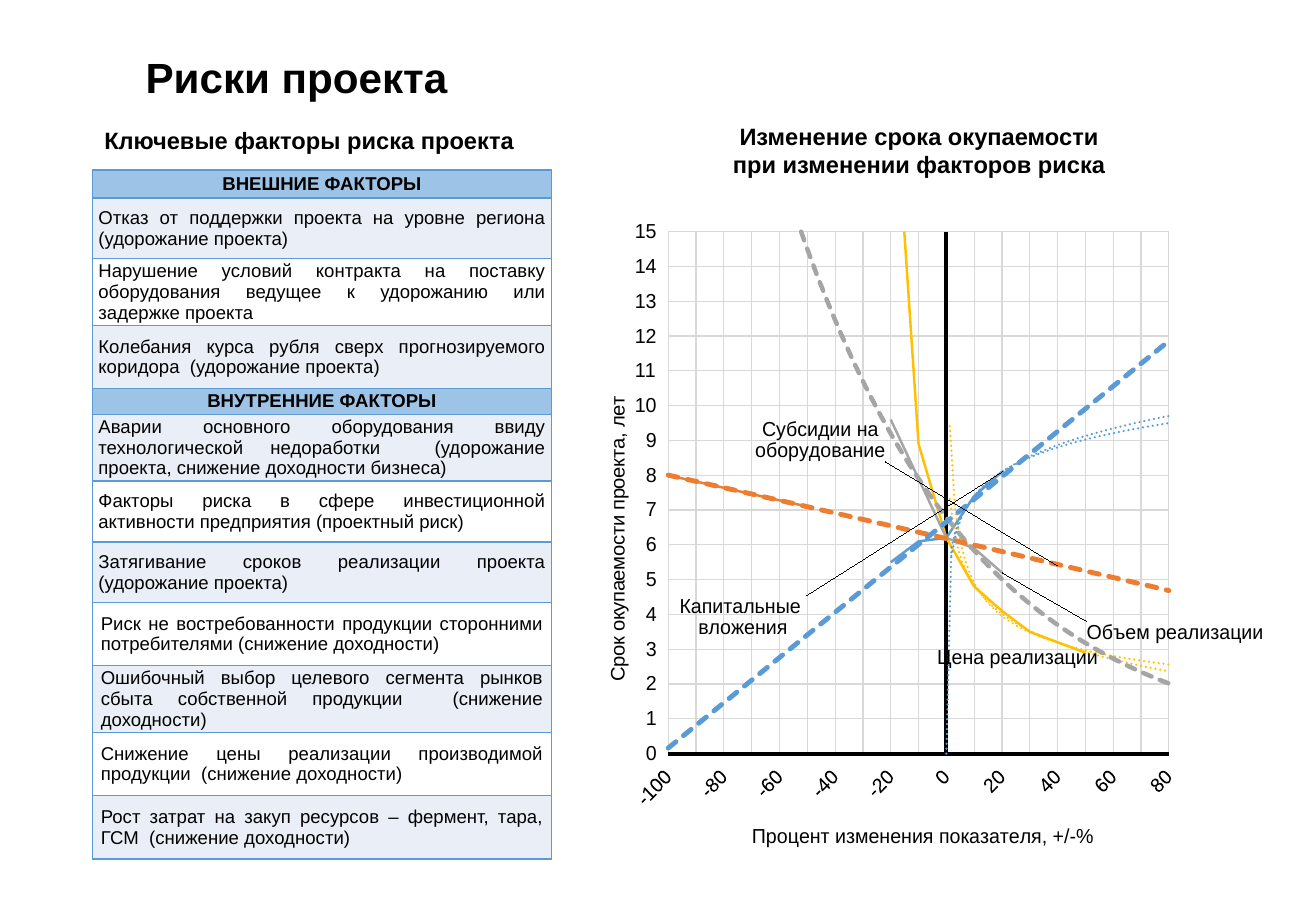
from lxml import etree
from pptx import Presentation
from pptx.chart.data import XyChartData
from pptx.dml.color import RGBColor
from pptx.enum.chart import XL_CHART_TYPE, XL_TICK_LABEL_POSITION, XL_TICK_MARK
from pptx.enum.text import MSO_ANCHOR, PP_ALIGN
from pptx.oxml import parse_xml
from pptx.oxml.ns import qn
from pptx.util import Inches, Pt

SCATTER = XL_CHART_TYPE.XY_SCATTER_LINES_NO_MARKERS
LABELS_LOW, NO_TICK = XL_TICK_LABEL_POSITION.LOW, XL_TICK_MARK.NONE
MIDDLE = MSO_ANCHOR.MIDDLE
LEFT, CENTER, JUSTIFY = PP_ALIGN.LEFT, PP_ALIGN.CENTER, PP_ALIGN.JUSTIFY
FONT = "Arial"
NS = ('xmlns:c="http://schemas.openxmlformats.org/drawingml/2006/chart" '
      'xmlns:a="http://schemas.openxmlformats.org/drawingml/2006/main"')
COLORS = {"text": "000000", "border": "5B9BD5", "section": "9DC3E6", "band": "EAEFF7",
          "plain": "FFFFFF", "grid": "D9D9D9", "capital": "5B9BD5", "subsidy": "ED7D31",
          "volume": "A5A5A5", "price": "FFC000"}

FACTORS = [
    ("ВНЕШНИЕ ФАКТОРЫ", 0.23, "section"),
    ("Отказ от поддержки проекта на уровне региона (удорожание проекта)", 0.5, "band"),
    ("Нарушение условий контракта на поставку оборудования ведущее к удорожанию или "
     "задержке проекта", 0.53, "plain"),
    ("Колебания курса рубля сверх прогнозируемого коридора  (удорожание проекта)", 0.52, "band"),
    ("ВНУТРЕННИЕ ФАКТОРЫ", 0.21, "section"),
    ("Аварии основного оборудования ввиду технологической недоработки  (удорожание "
     "проекта, снижение доходности бизнеса)", 0.53, "band"),
    ("Факторы риска в сфере инвестиционной активности предприятия (проектный риск)",
     0.5, "plain"),
    ("Затягивание сроков реализации проекта (удорожание проекта)", 0.5, "band"),
    ("Риск не востребованности продукции сторонними потребителями (снижение доходности)",
     0.52, "plain"),
    ("Ошибочный выбор целевого сегмента рынков сбыта собственной продукции  (снижение "
     "доходности)", 0.52, "band"),
    ("Снижение цены реализации производимой продукции  (снижение доходности)", 0.52, "plain"),
    ("Рост затрат на закуп ресурсов – фермент, тара, ГСМ  (снижение доходности)", 0.52, "band"),
]
WIDE_INSET_FROM = 8

CHANGES = [-100, -50, -20, -10, 0, 10, 20, 30, 40, 50, 80]
GAP = None
# name, colour, payback years, label (point, side, dx, dy, wrap), trends (kind, width, dash)
DOTTED = [("log", 1.5, "sysDot"), ("power", 1.5, "sysDot")]
PAYBACK = [
    ("Капитальные  вложения", "capital",
     [GAP, GAP, 5.5, 6.1, 6.2, 7.4, 8.1, GAP, GAP, GAP, GAP],
     (6, "r", -0.49, 0.22, "square"), DOTTED + [("linear", 3, "sysDash")]),
    ("Субсидии на оборудование", "subsidy",
     [8, 7.1, GAP, GAP, 6.2, GAP, GAP, GAP, 5.4, GAP, 4.7],
     (8, "r", -0.46, -0.19, "square"), [("poly", 3, "sysDash")]),
    ("Объем реализации", "volume",
     [GAP, GAP, 9.6, 7.9, 6.2, 5.9, 5.2, GAP, GAP, GAP, GAP],
     (6, "r", 0.12, 0.09, "none"), [("exp", 2.75, "sysDash")]),
    ("Цена реализации", "price",
     [GAP, GAP, 20.8, 8.9, 6.2, 4.8, 4.1, 3.5, 3.2, 2.9, GAP],
     (8, "b", -0.06, 0, "none"), DOTTED),
]


def color(key):
    """Return the named colour."""
    return RGBColor.from_string(COLORS[key])


def style_font(font, size, bold=False):
    """Apply the slide's font."""
    font.name, font.size, font.bold = FONT, Pt(size), bold
    font.color.rgb = color("text")


def add_heading(slide, box, lines, size, align):
    """Place a bold heading in a box."""
    heading = slide.shapes.add_textbox(*map(Inches, box)).text_frame
    heading.word_wrap = True
    heading.vertical_anchor = MIDDLE
    heading.text = "\n".join(lines)
    for line in heading.paragraphs:
        line.alignment = align
        style_font(line.runs[0].font, size, True)


def add_factors(slide, box):
    """Place the table of risk factors."""
    table = slide.shapes.add_table(len(FACTORS), 1, *map(Inches, box)).table
    table.first_row = table.horz_banding = False
    for number, (factor, height, fill) in enumerate(FACTORS):
        table.rows[number].height = Inches(height)
        cell = table.cell(number, 0)
        cell.text = factor
        cell.vertical_anchor = MIDDLE
        cell.margin_left = cell.margin_right = Inches(
            0.07 if number >= WIDE_INSET_FROM else 0.05)
        cell.margin_top = cell.margin_bottom = 0
        cell.fill.solid()
        cell.fill.fore_color.rgb = color(fill)
        paragraph = cell.text_frame.paragraphs[0]
        paragraph.alignment = CENTER if fill == "section" else JUSTIFY
        style_font(paragraph.runs[0].font, 11, fill == "section")
        for order, side in enumerate("LRTB"):
            cell._tc.get_or_add_tcPr().insert(order, parse_xml(
                f'<a:ln{side} {NS} w="12700"><a:solidFill><a:srgbClr '
                f'val="{COLORS["border"]}"/></a:solidFill></a:ln{side}>'))


def layout_xml(x, y, extra="", size=""):
    """Return a manual chart layout."""
    return parse_xml(f'<c:layout {NS}><c:manualLayout>{extra}<c:x val="{x}"/>'
                     f'<c:y val="{y}"/>{size}</c:manualLayout></c:layout>')


def label_xml(point, side, dx, dy, wrap):
    """Return labels that name the series at one point."""
    def flags(named):
        return "".join(f'<c:show{part} val="{int(named and part == "SerName")}"/>' for part in
                       ("LegendKey", "Val", "CatName", "SerName", "Percent", "BubbleSize"))
    layout = etree.tostring(layout_xml(dx, dy), encoding="unicode")
    return parse_xml(
        f'<c:dLbls {NS}><c:dLbl><c:idx val="{point}"/>{layout}<c:spPr><a:noFill/></c:spPr>'
        f'<c:txPr><a:bodyPr wrap="{wrap}"/><a:p><a:pPr><a:defRPr sz="1200" b="0"><a:solidFill>'
        f'<a:srgbClr val="{COLORS["text"]}"/></a:solidFill><a:latin typeface="{FONT}"/>'
        f'</a:defRPr></a:pPr><a:endParaRPr lang="ru-RU"/></a:p></c:txPr>'
        f'<c:dLblPos val="{side}"/>{flags(True)}</c:dLbl>{flags(False)}</c:dLbls>')


def trend_xml(kind, width, dash, key, known):
    """Return a trend line extended over the whole axis."""
    order = '<c:order val="2"/>' if kind == "poly" else ""
    return parse_xml(
        f'<c:trendline {NS}><c:spPr><a:ln w="{Pt(width)}" cap="rnd"><a:solidFill><a:srgbClr '
        f'val="{COLORS[key]}"/></a:solidFill><a:prstDash val="{dash}"/></a:ln></c:spPr>'
        f'<c:trendlineType val="{kind}"/>{order}<c:forward val="{CHANGES[-1] - known[-1]}"/>'
        f'<c:backward val="{known[0] - CHANGES[0]}"/><c:dispRSqr val="0"/>'
        f'<c:dispEq val="0"/></c:trendline>')


def style_axis(axis, title, title_at, low, high, step):
    """Set an axis's scale, lines and title."""
    axis.minimum_scale, axis.maximum_scale, axis.major_unit = low, high, step
    axis.major_tick_mark = axis.minor_tick_mark = NO_TICK
    axis.tick_label_position = LABELS_LOW
    axis.tick_labels.number_format = "General"
    axis.tick_labels.number_format_is_linked = False
    style_font(axis.tick_labels.font, 12)
    axis.format.line.color.rgb = color("text")
    axis.format.line.width = Pt(2.5)
    axis.has_major_gridlines = True
    axis.major_gridlines.format.line.color.rgb = color("grid")
    axis.major_gridlines.format.line.width = Pt(0.75)
    axis.axis_title.text_frame.text = title
    style_font(axis.axis_title.text_frame.paragraphs[0].runs[0].font, 12)
    title_element = axis.axis_title._element
    for old in title_element.findall(qn("c:layout")):
        title_element.remove(old)
    title_element.find(qn("c:tx")).addnext(layout_xml(
        *title_at, '<c:xMode val="edge"/><c:yMode val="edge"/>'))


def add_payback_chart(slide, box):
    """Place the payback sensitivity chart."""
    data = XyChartData()
    for name, _, years, _, _ in PAYBACK:
        series = data.add_series(name)
        for change, year in zip(CHANGES, years):
            series.add_data_point(change, year)
    chart = slide.shapes.add_chart(SCATTER, *map(Inches, box), data).chart
    chart.has_legend = chart.has_title = False
    style_font(chart.font, 12)
    style_axis(chart.category_axis, "Процент изменения показателя, +/-%", (0.26, 0.93),
               -100, 80, 10)
    style_axis(chart.value_axis, "Срок окупаемости проекта, лет", (0.04, 0.27), 0, 15, 1)
    chart.category_axis._element.find(qn("c:txPr")).find(qn("a:bodyPr")).set("rot", "-2700000")
    plot_area = chart._chartSpace.chart.plotArea
    for old in plot_area.findall(qn("c:layout")):
        plot_area.remove(old)
    plot_area.insert(0, layout_xml(
        0.14, 0.04, '<c:layoutTarget val="inner"/><c:xMode val="edge"/><c:yMode val="edge"/>',
        '<c:w val="0.75"/><c:h val="0.79"/>'))
    for series, (_, key, years, label, trends) in zip(chart.plots[0].series, PAYBACK):
        series.smooth = False
        series.format.line.color.rgb = color(key)
        series.format.line.width = Pt(1.5)
        known = [change for change, year in zip(CHANGES, years) if year is not GAP]
        x_values = series._element.find(qn("c:xVal"))
        x_values.addprevious(label_xml(*label))
        for trend in trends:
            x_values.addprevious(trend_xml(*trend, key, known))
        for value in list(series._element.find(qn("c:yVal")).iter(qn("c:pt"))):
            if years[int(value.get("idx"))] is GAP:
                value.getparent().remove(value)


def main():
    """Build the project risk slide."""
    deck = Presentation()
    deck.slide_width, deck.slide_height = Inches(10.83), Inches(7.5)
    slide = deck.slides.add_slide(deck.slide_layouts[6])
    add_heading(slide, (1.1, 0.32, 8.62, 0.63), ["Риски проекта"], 25, LEFT)
    add_payback_chart(slide, (4.73, 1.69, 5.67, 5.44))
    add_heading(slide, (4.73, 0.95, 5.67, 0.57),
                ["Изменение срока окупаемости", "при изменении факторов риска"], 14, CENTER)
    add_factors(slide, (0.76, 1.4, 3.78, 5.66))
    add_heading(slide, (0.76, 0.98, 3.78, 0.34), ["Ключевые факторы риска проекта"], 14, LEFT)
    deck.save("out.pptx")


if __name__ == "__main__":
    main()
